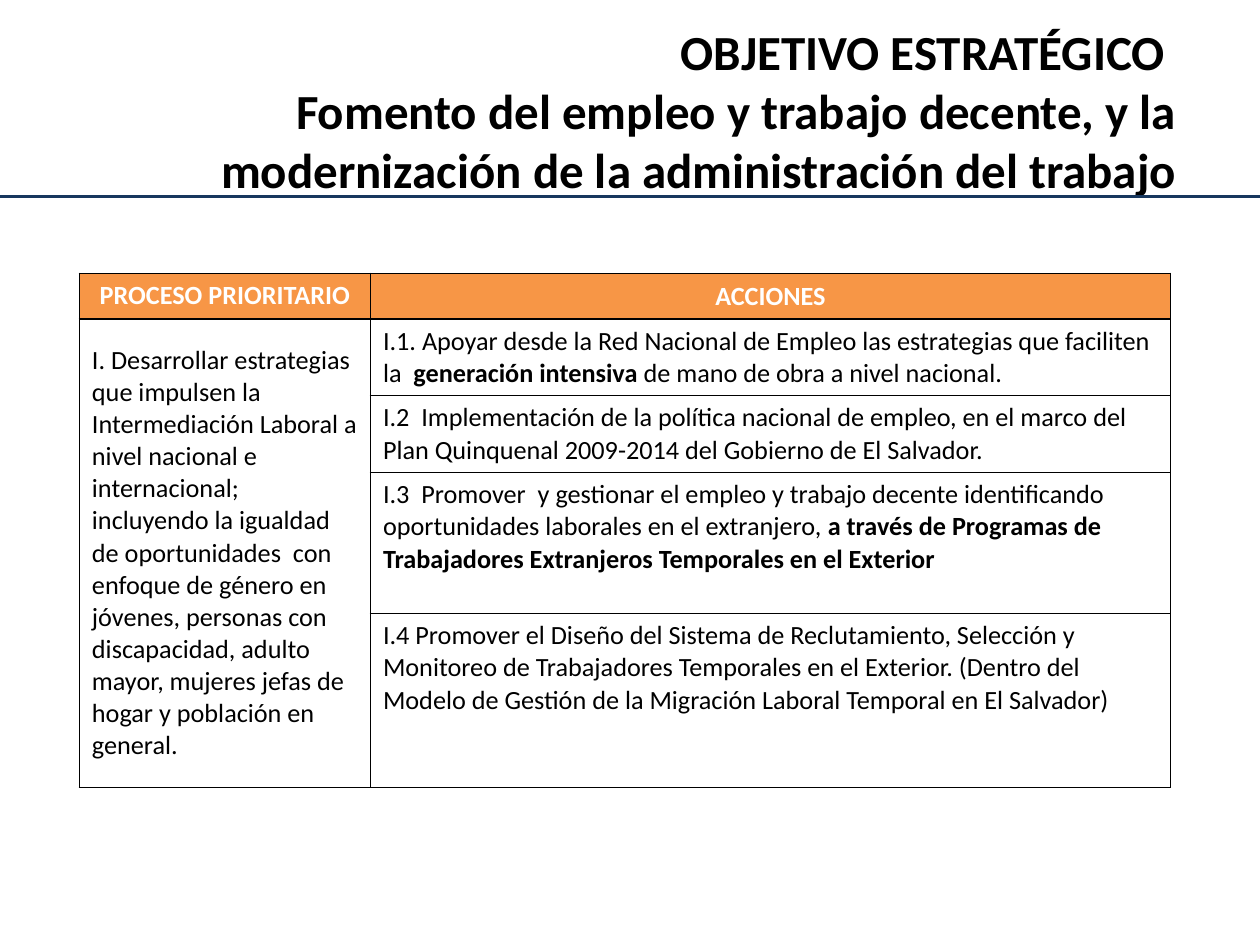
from dataclasses import dataclass

from lxml import etree
from pptx import Presentation
from pptx.dml.color import RGBColor
from pptx.enum.shapes import MSO_CONNECTOR
from pptx.enum.text import MSO_ANCHOR, PP_ALIGN
from pptx.oxml.ns import qn
from pptx.util import Inches, Pt

STRAIGHT = MSO_CONNECTOR.STRAIGHT
TOP, MIDDLE = MSO_ANCHOR.TOP, MSO_ANCHOR.MIDDLE
LEFT, CENTER, RIGHT = PP_ALIGN.LEFT, PP_ALIGN.CENTER, PP_ALIGN.RIGHT


@dataclass(frozen=True)
class Theme:
    """Colours, font and sizes of the slide."""
    font: str = "Calibri"
    text: str = "000000"
    header_text: str = "FFFFFF"
    header_fill: str = "F79646"
    rule: str = "17375E"
    border: str = "000000"
    title_size: int = 28
    table_size: int = 15
    rule_width: int = 2
    border_width: int = 1


THEME = Theme()

TITLE = [
    "OBJETIVO ESTRATÉGICO ",
    "Fomento del empleo y trabajo decente, y la modernización de la administración del trabajo",
]
HEADERS = ["PROCESO PRIORITARIO", "ACCIONES"]
PROCESS = (
    "I. Desarrollar estrategias que impulsen la Intermediación Laboral a nivel nacional e "
    "internacional;  incluyendo la igualdad de oportunidades  con enfoque de género en jóvenes, "
    "personas con discapacidad, adulto mayor, mujeres jefas de hogar y población en general."
)
ACTIONS = [
    [("I.1. Apoyar desde la Red Nacional de Empleo las estrategias que faciliten la  ", False),
     ("generación intensiva", True),
     (" de mano de obra a nivel nacional.", False)],
    [("I.2  Implementación de la política nacional de empleo, en el marco del Plan Quinquenal "
      "2009-2014 del Gobierno de El Salvador.", False)],
    [("I.3  Promover  y gestionar el empleo y trabajo decente identificando oportunidades "
      "laborales en el extranjero, ", False),
     ("a través de Programas de Trabajadores Extranjeros Temporales en el Exterior", True)],
    [("I.4 Promover el Diseño del Sistema de Reclutamiento, Selección y Monitoreo de "
      "Trabajadores Temporales en el Exterior. (Dentro del Modelo de Gestión de la Migración "
      "Laboral Temporal en El Salvador)", False)],
]
COLUMN_WIDTHS = [2.31, 6.35]
ROW_HEIGHTS = [0.36, 0.61, 0.61, 1.12, 1.38]


def set_attributes(target, values):
    """Set each named attribute of the target."""
    for name, value in values.items():
        setattr(target, name, value)


def write_paragraph(paragraph, parts, size, color, alignment):
    """Fill a paragraph with (text, bold) parts."""
    paragraph.alignment = alignment
    for text, bold in parts:
        run = paragraph.add_run()
        run.text = text
        set_attributes(run.font, {"name": THEME.font, "size": Pt(size), "bold": bold})
        run.font.color.rgb = RGBColor.from_string(color)


def add_title(slide, left, top, width, height):
    """Place the right-aligned title in its box."""
    frame = slide.shapes.add_textbox(left, top, width, height).text_frame
    set_attributes(frame, {"word_wrap": True, "vertical_anchor": TOP,
                           "margin_top": Inches(0.01), "margin_bottom": 0})
    for index, line in enumerate(TITLE):
        paragraph = frame.add_paragraph() if index else frame.paragraphs[0]
        write_paragraph(paragraph, [(line, True)], THEME.title_size, THEME.text, RIGHT)


def add_rule(slide, left, top, width):
    """Draw the horizontal rule under the title."""
    rule = slide.shapes.add_connector(STRAIGHT, left, top, left + width, top)
    rule.line.color.rgb = RGBColor.from_string(THEME.rule)
    rule.line.width = Pt(THEME.rule_width)
    etree.SubElement(rule._element.spPr, qn("a:effectLst"))


def add_borders(cell):
    """Draw a solid line on the four sides of a cell."""
    properties = cell._tc.get_or_add_tcPr()
    for side in ("lnL", "lnR", "lnT", "lnB"):
        line = etree.SubElement(properties, qn(f"a:{side}"), w=str(Pt(THEME.border_width)))
        fill = etree.SubElement(line, qn("a:solidFill"))
        etree.SubElement(fill, qn("a:srgbClr"), val=THEME.border)


def fill_cell(cell, parts, color, alignment, anchor):
    """Write the text of a table cell."""
    cell.vertical_anchor = anchor
    write_paragraph(cell.text_frame.paragraphs[0], parts, THEME.table_size, color, alignment)


def add_actions_table(slide, left, top, width, height):
    """Place the table with the priority process and its actions."""
    table = slide.shapes.add_table(
        len(ROW_HEIGHTS), len(COLUMN_WIDTHS), left, top, width, height).table
    set_attributes(table, {"first_row": False, "horz_banding": False})
    for column, column_width in zip(table.columns, COLUMN_WIDTHS):
        column.width = Inches(column_width)
    for index, (row, row_height) in enumerate(zip(table.rows, ROW_HEIGHTS)):
        row.height = Inches(row_height)
        for cell in row.cells:
            add_borders(cell)
            if index:
                cell.fill.background()
            else:
                cell.fill.solid()
                cell.fill.fore_color.rgb = RGBColor.from_string(THEME.header_fill)
    for column, (header, anchor) in enumerate(zip(HEADERS, (TOP, MIDDLE))):
        fill_cell(table.cell(0, column), [(header, True)], THEME.header_text, CENTER, anchor)
    process_cell = table.cell(1, 0)
    process_cell.merge(table.cell(len(ACTIONS), 0))
    fill_cell(process_cell, [(PROCESS, False)], THEME.text, LEFT, MIDDLE)
    for row, parts in enumerate(ACTIONS, start=1):
        fill_cell(table.cell(row, 1), parts, THEME.text, LEFT, TOP)


def main():
    """Build the slide and save it."""
    presentation = Presentation()
    set_attributes(presentation, {"slide_width": Inches(10), "slide_height": Inches(7.5)})
    slide = presentation.slides.add_slide(presentation.slide_layouts[6])
    add_title(slide, Inches(0), Inches(0.16), Inches(9.43), Inches(1.25))
    add_actions_table(slide, Inches(0.63), Inches(2.17),
                      Inches(sum(COLUMN_WIDTHS)), Inches(sum(ROW_HEIGHTS)))
    add_rule(slide, Inches(0), Inches(1.56), presentation.slide_width)
    presentation.save("out.pptx")


if __name__ == "__main__":
    main()
